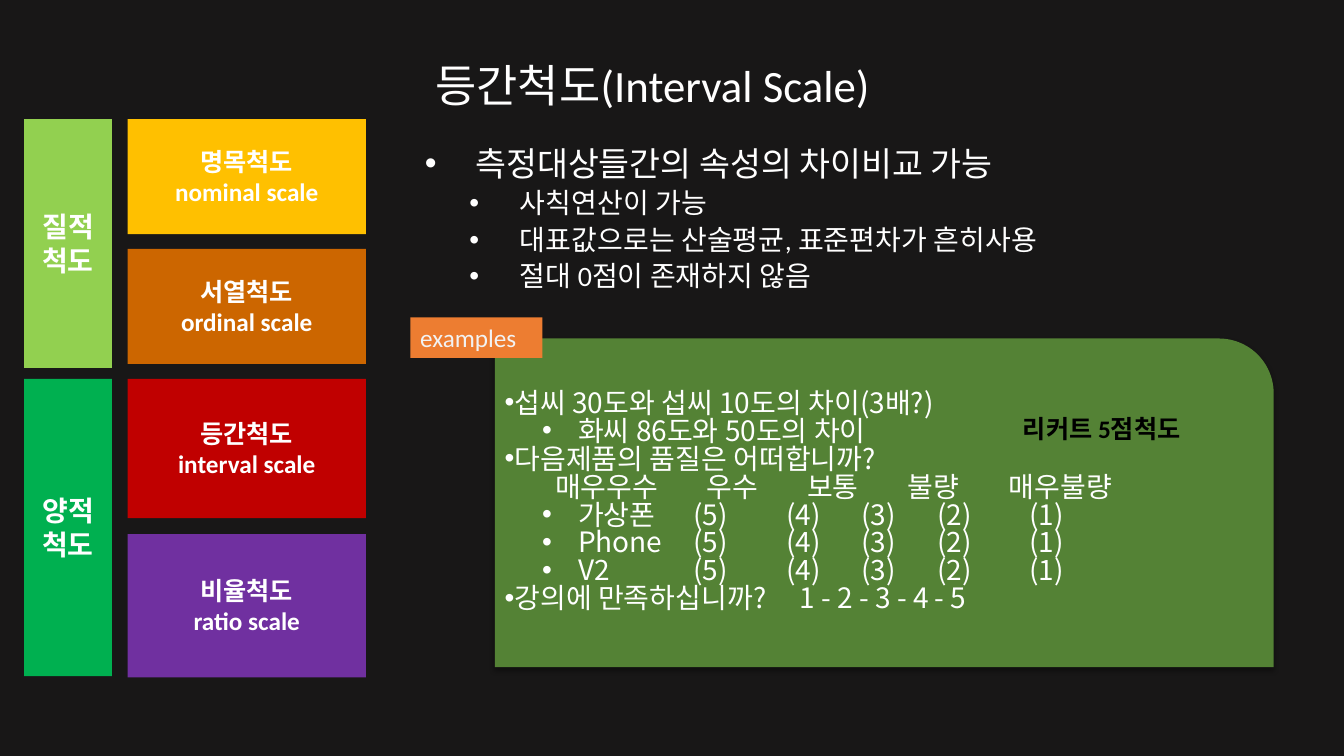
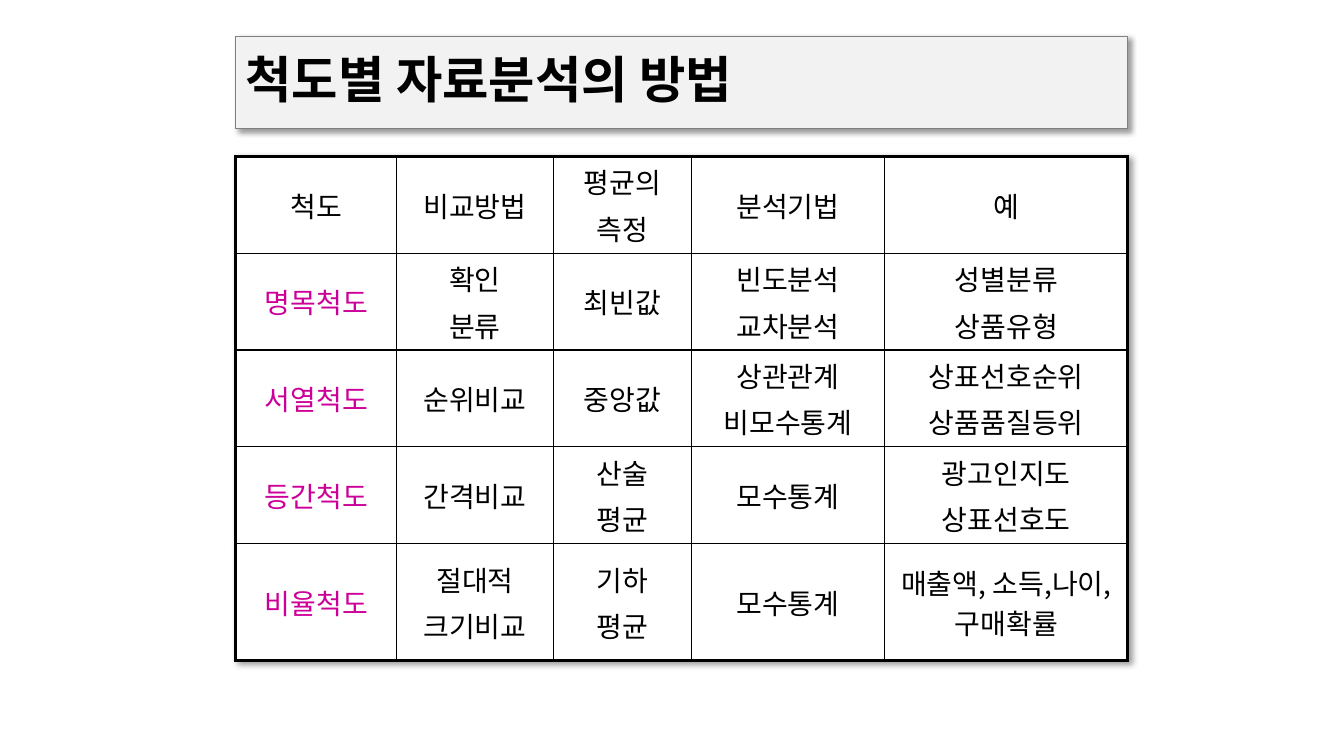
"""Build two slides on measurement scales and the analyses that suit them."""
from lxml import etree
from pptx import Presentation
from pptx.dml.color import RGBColor
from pptx.enum.shapes import MSO_SHAPE
from pptx.enum.text import MSO_ANCHOR, PP_ALIGN
from pptx.oxml.ns import qn
from pptx.util import Cm, Pt

RECTANGLE = MSO_SHAPE.RECTANGLE
ROUND_CORNER = MSO_SHAPE.ROUND_1_RECTANGLE
TOP, MIDDLE = MSO_ANCHOR.TOP, MSO_ANCHOR.MIDDLE
LEFT, CENTER = PP_ALIGN.LEFT, PP_ALIGN.CENTER
LATIN, KOREAN = "Calibri", "Noto Sans CJK KR"
DARK, WHITE, BLACK, PALE = "181717", "FFFFFF", "000000", "F2F2F2"
GREY, MAGENTA = "808080", "CC0099"


def write(frame, text, size=20, color=WHITE, font=LATIN, bold=False, align=LEFT,
          spacing=None, before=0, bullet=False, margin=0, hang=0, tabs=()):
    """Add one formatted paragraph for each line of text."""
    for line in text.split("\n"):
        para = frame.add_paragraph() if frame.text else frame.paragraphs[0]
        para.alignment = align
        para.space_before = Pt(before)
        if spacing:
            para.line_spacing = spacing
        layout = para._p.get_or_add_pPr()
        layout.set("marL", str(Cm(margin)))
        layout.set("indent", str(-Cm(hang)))
        if bullet:
            etree.SubElement(layout, qn("a:buFont"), typeface="Arial")
            etree.SubElement(layout, qn("a:buChar"), char="•")
        if tabs:
            stops = etree.SubElement(layout, qn("a:tabLst"))
            for position, kind in tabs:
                etree.SubElement(stops, qn("a:tab"), pos=str(Cm(position)), algn=kind)
        span = para.add_run()
        span.text = line
        span.font.size = Pt(size)
        span.font.bold = bold
        span.font.color.rgb = RGBColor.from_string(color)
        span.font.name = font
        etree.SubElement(span._r.get_or_add_rPr(), qn("a:ea"), typeface=font)


def add_box(page, left, top, width, height, fill=None, line=None,
            kind=RECTANGLE, anchor=MIDDLE, wrap=True):
    """Add a filled shape, or a text box when there is no fill."""
    area = Cm(left), Cm(top), Cm(width), Cm(height)
    if fill:
        box = page.shapes.add_shape(kind, *area)
        box.shadow.inherit = False
        box.fill.solid()
        box.fill.fore_color.rgb = RGBColor.from_string(fill)
        if line:
            box.line.color.rgb = RGBColor.from_string(line)
            box.line.width = Pt(0.75)
        else:
            box.line.fill.background()
    else:
        box = page.shapes.add_textbox(*area)
    box.text_frame.word_wrap = wrap
    box.text_frame.vertical_anchor = anchor
    return box


deck = Presentation()
deck.slide_width, deck.slide_height = Cm(33.87), Cm(19.05)
pages = []
for background in (DARK, WHITE):
    page = deck.slides.add_slide(deck.slide_layouts[6])
    page.background.fill.solid()
    page.background.fill.fore_color.rgb = RGBColor.from_string(background)
    pages.append(page)
scale_page, method_page = pages

title = add_box(scale_page, 10.72, 1.04, 21.64, 2.34)
write(title.text_frame, "등간척도(Interval Scale)", size=32, spacing=0.9)

features = add_box(scale_page, 10.46, 3.58, 22.86, 4.75, anchor=TOP).text_frame
write(features, "측정대상들간의 속성의 차이비교 가능", size=24, spacing=0.9,
      bullet=True, margin=1.27, hang=1.27)
write(features, "사칙연산이 가능\n대표값으로는 산술평균, 표준편차가 흔히사용\n절대 0점이 존재하지 않음",
      spacing=0.9, before=4.5, bullet=True, margin=2.39, hang=1.27)

example_box = add_box(scale_page, 12.47, 8.53, 19.63, 8.28, "548235", kind=ROUND_CORNER)
examples = example_box.text_frame
rating_tabs = [(stop, "ctr") for stop in (5.19, 7.53, 9.42, 11.34, 13.66)]
ratings = "\t(5)\t(4)\t(3)\t(2)\t(1)"
body = {"font": KOREAN, "spacing": 0.83}
point = {"bullet": True, **body}
subpoint = {"margin": 1.85, "hang": 0.91, **point}
write(examples, "섭씨 30도와 섭씨 10도의 차이(3배?)", **point)
write(examples, "화씨 86도와 50도의 차이", **subpoint)
write(examples, "다음제품의 품질은 어떠합니까?", **point)
write(examples, "\t매우우수\t우수\t보통\t불량\t매우불량", tabs=rating_tabs, **body)
for product in ("가상폰", "Phone", "V2"):
    write(examples, product + ratings, tabs=rating_tabs, **subpoint)
write(examples, "강의에 만족하십니까?\t1 - 2 - 3 - 4 - 5", tabs=[(7.43, "l")], **point)

label = add_box(scale_page, 10.34, 8, 3.33, 1.02, "ED7D31")
write(label.text_frame, "examples", size=18, color=PALE)

for name, top, height, fill in (("질적척도", 3, 6.27, "92D050"),
                                ("양적척도", 9.55, 7.49, "00B050")):
    group = add_box(scale_page, 0.61, top, 2.21, height, fill)
    write(group.text_frame, name, bold=True, align=CENTER)

for name, top, height, fill in (("명목척도\nnominal scale", 3, 2.9, "FFC000"),
                                ("서열척도\nordinal scale", 6.27, 2.9, "CC6600"),
                                ("등간척도\ninterval scale", 9.55, 3.51, "C00000"),
                                ("비율척도\nratio scale", 13.46, 3.61, "7030A0")):
    card = add_box(scale_page, 3.22, top, 6, height, fill)
    write(card.text_frame, name, size=18, bold=True, align=CENTER)

likert = add_box(scale_page, 25.53, 10.29, 4.83, 1.02, anchor=TOP, wrap=False)
write(likert.text_frame, "리커트 5점척도", size=18, color=BLACK, bold=True)

banner = add_box(method_page, 5.94, 0.91, 22.48, 2.34, PALE, line=GREY)
write(banner.text_frame, "척도별 자료분석의 방법", size=36, color=BLACK, bold=True, spacing=0.9)

rows = [
    ["척도", "비교방법", "평균의\n측정", "분석기법", "예"],
    ["명목척도", "확인\n분류", "최빈값", "빈도분석\n교차분석", "성별분류\n상품유형"],
    ["서열척도", "순위비교", "중앙값", "상관관계\n비모수통계", "상표선호순위\n상품품질등위"],
    ["등간척도", "간격비교", "산술\n평균", "모수통계", "광고인지도\n상표선호도"],
    ["비율척도", "절대적\n크기비교", "기하\n평균", "모수통계", "매출액, 소득,나이,구매확률"],
]
widths = [4.06, 3.94, 3.48, 4.88, 6.12]
heights = [2.44] * 4 + [2.95]
last_row, last_column = len(rows) - 1, len(widths) - 1
table = method_page.shapes.add_table(len(rows), len(widths), Cm(5.94), Cm(3.94),
                                     Cm(sum(widths)), Cm(sum(heights))).table
table.first_row = table.horz_banding = False
for column, width in zip(table.columns, widths):
    column.width = Cm(width)
for y, (texts, height) in enumerate(zip(rows, heights)):
    table.rows[y].height = Cm(height)
    for x, text in enumerate(texts):
        cell = table.cell(y, x)
        cell.vertical_anchor = MIDDLE
        outer = {"L": x == 0, "R": x == last_column, "T": y == 0, "B": y == last_row}
        for side, thick in outer.items():
            border = etree.SubElement(cell._tc.get_or_add_tcPr(), qn("a:ln" + side),
                                      w=str(Pt(2.25 if thick else 1)))
            paint = etree.SubElement(border, qn("a:solidFill"))
            etree.SubElement(paint, qn("a:srgbClr"), val=BLACK)
        cell.fill.solid()
        cell.fill.fore_color.rgb = RGBColor.from_string(WHITE)
        write(cell.text_frame, text, color=MAGENTA if x == 0 and y > 0 else BLACK,
              font=KOREAN, align=CENTER, before=4)

table_format = table._tbl.tblPr
table_effects = etree.Element(qn("a:effectLst"))
table_format.insert(0, table_effects)
for effects, blur, distance, angle, opacity in (
        (example_box._element.spPr.find(qn("a:effectLst")), 3.5, 2.2, 90, 32),
        (banner._element.spPr.find(qn("a:effectLst")), 4, 3, 45, 40),
        (table_effects, 4, 3, 45, 40)):
    shadow = etree.SubElement(effects, qn("a:outerShdw"), blurRad=str(Pt(blur)),
                              dist=str(Pt(distance)), dir=str(angle * 60000),
                              algn="tl", rotWithShape="0")
    tint = etree.SubElement(shadow, qn("a:srgbClr"), val=BLACK)
    etree.SubElement(tint, qn("a:alpha"), val=str(opacity * 1000))

deck.save("out.pptx")
